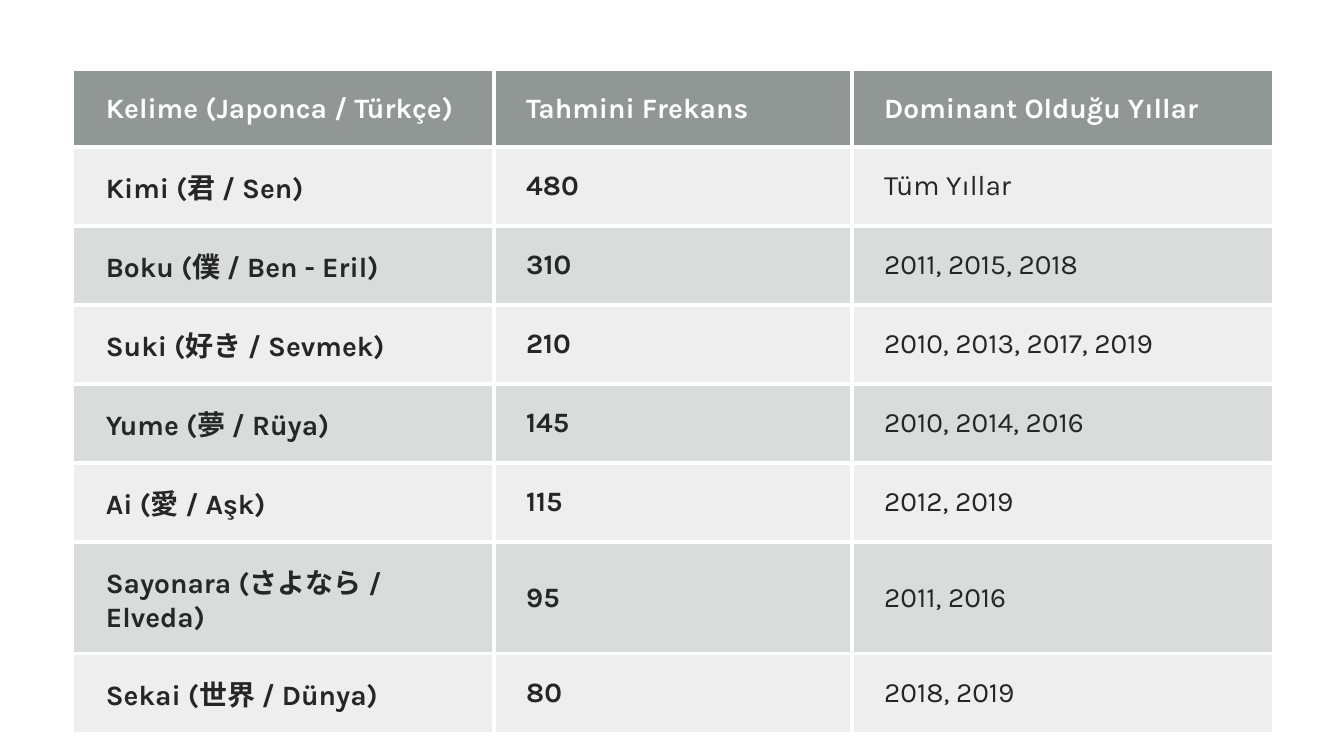
"""Builds a slide with a table of frequent Japanese words, their counts and their years."""
from typing import NamedTuple

from lxml import etree
from pptx import Presentation
from pptx.dml.color import RGBColor
from pptx.enum.text import MSO_ANCHOR
from pptx.oxml.ns import qn
from pptx.util import Inches, Pt

MIDDLE = MSO_ANCHOR.MIDDLE
FONT = "Karla"
WHITE = "FFFFFF"
INK = "262626"
HEADER_FILL = "636B68"
BODY_FILL = "878E8B"
BORDER_WIDTH = Pt(3)
COLUMN_WIDTHS = (4.17, 3.55, 4.17)
ROW_HEIGHT = 0.76


class WordRow(NamedTuple):
    word: str
    frequency: str
    years: str


HEADINGS = WordRow("Kelime (Japonca / Türkçe)", "Tahmini Frekans", "Dominant Olduğu Yıllar")
WORDS = (
    WordRow("Kimi (君 / Sen)", "480", "Tüm Yıllar"),
    WordRow("Boku (僕 / Ben - Eril)", "310", "2011, 2015, 2018"),
    WordRow("Suki (好き / Sevmek)", "210", "2010, 2013, 2017, 2019"),
    WordRow("Yume (夢 / Rüya)", "145", "2010, 2014, 2016"),
    WordRow("Ai (愛 / Aşk)", "115", "2012, 2019"),
    WordRow("Sayonara (さよなら / Elveda)", "95", "2011, 2016"),
    WordRow("Sekai (世界 / Dünya)", "80", "2018, 2019"),
)


def rgb(colour: str) -> RGBColor:
    return RGBColor.from_string(colour)


def write_text(cell, text: str, *, colour: str, bold: bool, size: float = 20) -> None:
    cell.vertical_anchor = MIDDLE
    cell.margin_left = Inches(0.32)
    cell.margin_right = cell.margin_top = cell.margin_bottom = Inches(0.19)
    run = cell.text_frame.paragraphs[0].add_run()
    run.text = text
    run.font.name = FONT
    run.font.size = Pt(size)
    run.font.bold = bold
    run.font.color.rgb = rgb(colour)


def fill_cell(cell, colour: str, opacity: int) -> None:
    cell.fill.solid()
    cell.fill.fore_color.rgb = rgb(colour)
    tint = cell._tc.tcPr.find(f".//{qn('a:srgbClr')}")
    etree.SubElement(tint, qn("a:alpha"), val=str(opacity * 1000))


def add_borders(cell, sides: str) -> None:
    for position, side in enumerate(sides):
        line = etree.Element(qn(f"a:ln{side}"), w=str(BORDER_WIDTH))
        solid = etree.SubElement(line, qn("a:solidFill"))
        etree.SubElement(solid, qn("a:srgbClr"), val=WHITE)
        cell._tc.tcPr.insert(position, line)


def inner_sides(row: int, column: int, row_count: int, column_count: int) -> str:
    has_neighbour = {
        "L": column > 0,
        "R": column < column_count - 1,
        "T": row > 0,
        "B": row < row_count - 1,
    }
    return "".join(side for side, inner in has_neighbour.items() if inner)


def add_word_table(slide, rows: tuple[WordRow, ...]) -> None:
    row_count, column_count = len(rows), len(COLUMN_WIDTHS)
    table = slide.shapes.add_table(
        row_count, column_count, Inches(0.73), Inches(0.7),
        Inches(sum(COLUMN_WIDTHS)), Inches(ROW_HEIGHT * row_count),
    ).table
    table.horz_banding = False
    for column, width in zip(table.columns, COLUMN_WIDTHS):
        column.width = Inches(width)
    for row_index, entry in enumerate(rows):
        table.rows[row_index].height = Inches(ROW_HEIGHT)
        is_header = row_index == 0
        for column_index, text in enumerate(entry):
            cell = table.cell(row_index, column_index)
            is_years = column_index == column_count - 1
            write_text(cell, text, colour=WHITE if is_header else INK,
                       bold=is_header or not is_years)
            if is_header:
                fill_cell(cell, HEADER_FILL, 70)
            else:
                fill_cell(cell, BODY_FILL, 15 if row_index % 2 else 30)
            add_borders(cell, inner_sides(row_index, column_index, row_count, column_count))


def main() -> None:
    presentation = Presentation()
    presentation.slide_width = Inches(13.33)
    presentation.slide_height = Inches(7.5)
    slide = presentation.slides.add_slide(presentation.slide_layouts[6])
    add_word_table(slide, (HEADINGS, *WORDS))
    presentation.save("out.pptx")


if __name__ == "__main__":
    main()
